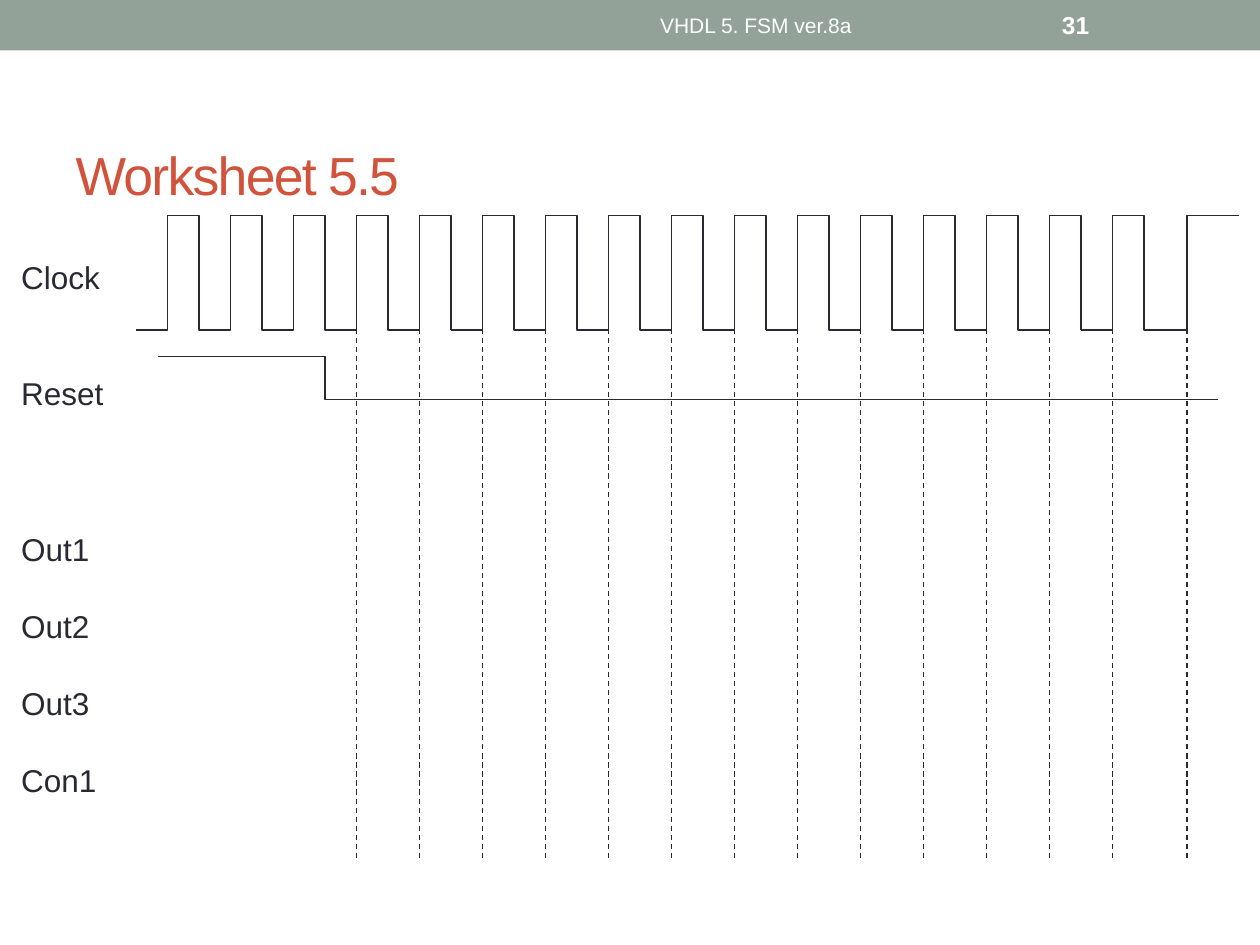
from pptx import Presentation
from pptx import util as u
from pptx.dml.color import RGBColor
from pptx.enum import dml, shapes, text
from pptx.oxml.ns import qn
from lxml import etree

Inches, Pt = u.Inches, u.Pt
COLORS = {"band": "93A299", "title": "D2533C", "ink": "292934", "white": "FFFFFF"}


def write(p, words, size, color, bold=False):
    r = p.add_run()
    r.text = words
    for name, value in {"name": "Arial", "size": Pt(size), "bold": bold}.items():
        setattr(r.font, name, value)
    r.font.color.rgb = RGBColor.from_string(COLORS[color])
    return r


def trace(points):
    """Draw an unfilled signal line through points given in inches."""
    pts = [(Inches(x), Inches(y)) for x, y in points]
    fb = s.shapes.build_freeform(*pts[0])
    fb.add_line_segments(pts[1:], close=False)
    sp = fb.convert_to_shape()
    sp.shadow.inherit = False
    sp.fill.background()
    sp.line.width = Pt(0.75)
    sp.line.color.rgb = RGBColor.from_string(COLORS["ink"])


prs = Presentation()
prs.slide_width, prs.slide_height = Inches(10), Inches(7.5)
s = prs.slides.add_slide(prs.slide_layouts[5])

# Header band
band = s.shapes.add_shape(shapes.MSO_SHAPE.RECTANGLE, 0, 0, Inches(10), Inches(0.4))
band.shadow.inherit = False
band.fill.solid()
band.fill.fore_color.rgb = RGBColor.from_string(COLORS["band"])
band.line.fill.background()

# Title
title = s.shapes.title
title.left, title.top, title.width, title.height = map(Inches, (0.5, 0.58, 9, 1.08))
tf = title.text_frame
for name, value in {"auto_size": text.MSO_AUTO_SIZE.NONE, "word_wrap": True,
                    "vertical_anchor": text.MSO_ANCHOR.BOTTOM,
                    "margin_bottom": Inches(0.02)}.items():
    setattr(tf, name, value)
tf.paragraphs[0].alignment = text.PP_ALIGN.LEFT
r = write(tf.paragraphs[0], "Worksheet 5.5", 30.6, "title")
r.font._element.set("spc", "-100")

# Footer and slide number in the band
for words, left, width, size, bold, align in (
        ("VHDL 5. FSM ver.8a", 3.75, 4.5, 12, False, text.PP_ALIGN.CENTER),
        ("31", 8.33, 1.17, 14, True, text.PP_ALIGN.LEFT)):
    tf = s.shapes.add_textbox(Inches(left), Inches(0.02), Inches(width), Inches(0.36)).text_frame
    tf.word_wrap = True
    tf.vertical_anchor = text.MSO_ANCHOR.MIDDLE
    tf.paragraphs[0].alignment = align
    write(tf.paragraphs[0], words, size, "white", bold)

# Signal names, spaced by multiples of one row
ROW = 22.4
tf = s.shapes.add_textbox(Inches(0.07), Inches(1.08), Inches(1.02), Inches(5.25)).text_frame
tf.word_wrap = True
tf.margin_top = Inches(0.97)
signals = (("Clock", 0), ("Reset", 2), ("Out1", 3), ("Out2", 1), ("Out3", 1), ("Con1", 1))
for i, (signal, rows) in enumerate(signals):
    p = tf.add_paragraph() if i else tf.paragraphs[0]
    p.space_before = Pt(rows * ROW)
    write(p, signal, 18, "ink")

# Dashed guides below each rising clock edge after reset
for x in [2.83 + 0.5 * i for i in range(13)] + [9.42]:
    guide = s.shapes.add_connector(shapes.MSO_CONNECTOR.STRAIGHT,
                                   Inches(x), Inches(2.54), Inches(x), Inches(6.83))
    guide.line.width = Pt(0.75)
    guide.line.color.rgb = RGBColor.from_string(COLORS["ink"])
    guide.line.dash_style = dml.MSO_LINE.DASH
    etree.SubElement(guide._element.spPr, qn("a:effectLst"))

# Clock: three bursts of five pulses, then a longer last period
HIGH, LOW = 1.71, 2.62
for start in (1.08, 3.58, 6.08):
    points = [(start, LOW)]
    for i in range(5):
        rise, fall = start + 0.5 * i + 0.25, start + 0.5 * i + 0.5
        points += [(rise, LOW), (rise, HIGH), (fall, HIGH), (fall, LOW)]
    trace(points)
trace([(8.58, LOW), (8.83, LOW), (8.83, HIGH), (9.08, HIGH), (9.08, LOW),
       (9.42, LOW), (9.42, HIGH), (9.83, HIGH)])

# Reset
trace([(1.25, 2.83), (2.58, 2.83), (2.58, 3.17), (9.67, 3.17)])

prs.save("out.pptx")
